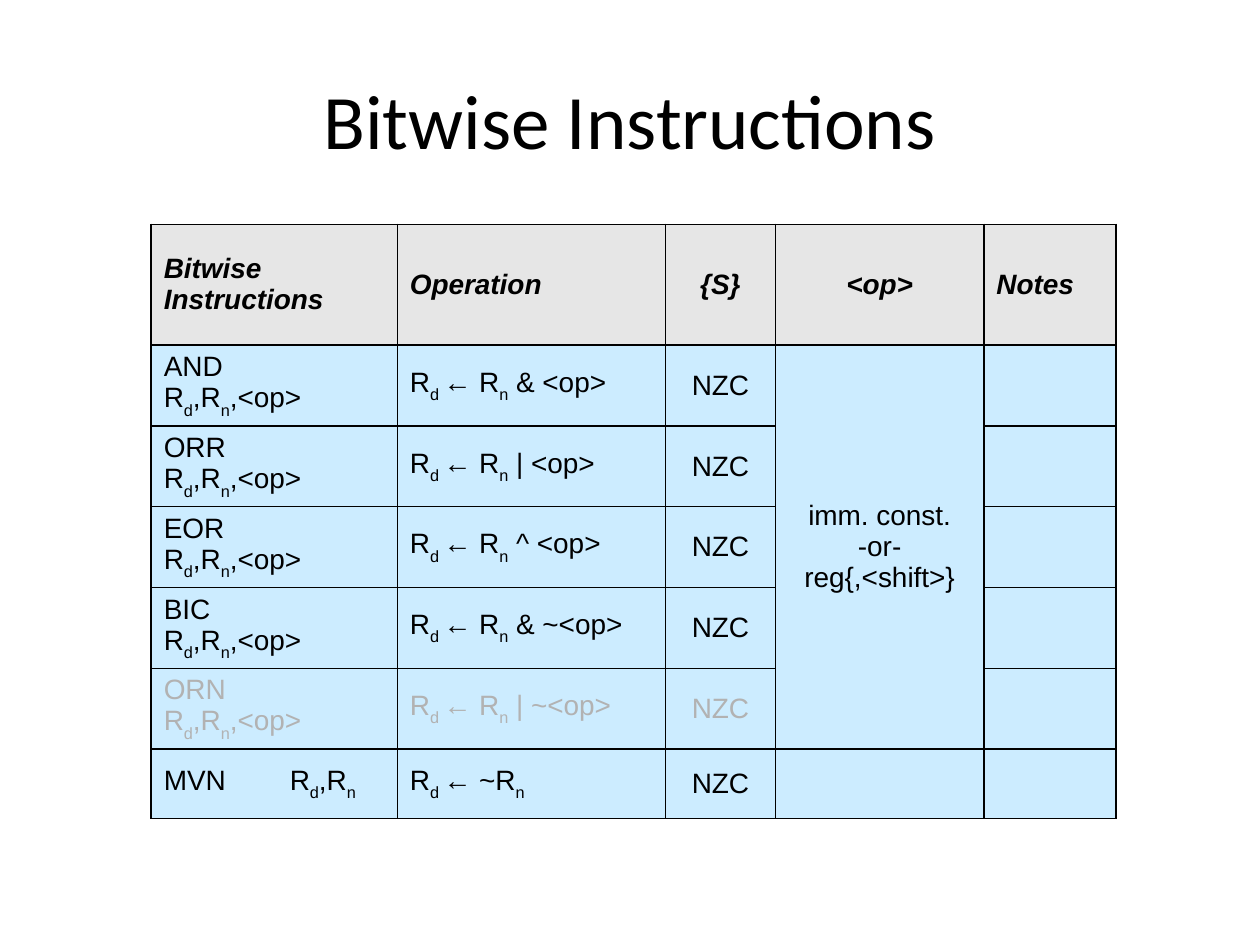
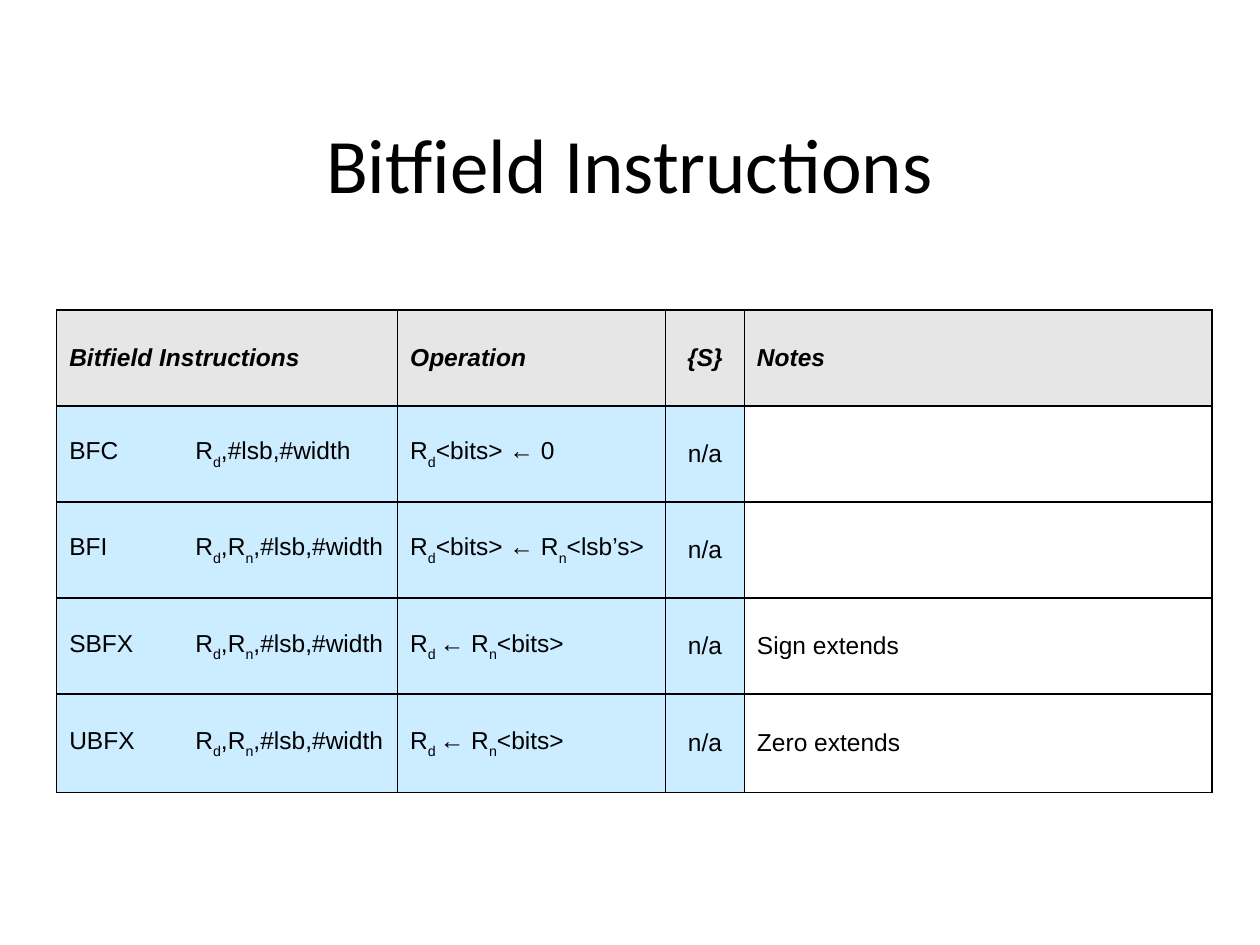
"""Build two slides of tables listing bitwise and bitfield instructions."""
from dataclasses import dataclass

from lxml import etree
from pptx import Presentation
from pptx import util as u
from pptx.dml.color import RGBColor
from pptx.enum import text as t
from pptx.oxml import ns

Pt = u.Pt
LEFT, CENTER = t.PP_ALIGN.LEFT, t.PP_ALIGN.CENTER


@dataclass(frozen=True)
class Theme:
    ink: str = "000000"
    dim: str = "B2B2B2"
    header: str = "E6E6E6"
    body: str = "CCECFF"
    paper: str = "FFFFFF"
    title_font: str = "Calibri"
    table_font: str = "Arial"
    title_size: int = 44
    bitwise_size: int = 16
    bitfield_size: int = 14
    border: int = 1
    operand_tab: int = 72


THEME = Theme()


@dataclass(frozen=True)
class Column:
    heading: str
    width: float
    align: t.PP_ALIGN = LEFT
    fill: str = THEME.body
    tab: int | None = None


@dataclass(frozen=True)
class Instruction:
    cells: tuple[str, ...]
    height: float
    color: str = THEME.ink


@dataclass(frozen=True)
class Listing:
    title: str
    title_top: float
    left: float
    top: float
    size: int
    header_height: float
    columns: tuple[Column, ...]
    instructions: tuple[Instruction, ...]
    merge: tuple[int, int, int] | None = None


def bitwise(name: str, operation: str, height: float = 39.6, operands: str = "R_d_,R_n_,<op>",
            choice: str = "", color: str = THEME.ink) -> Instruction:
    """Describe one row of the bitwise table."""
    return Instruction((f"{name} \t{operands}", operation, "NZC", choice, ""), height, color)


def bitfield(name: str, operation: str, note: str = "", height: float = 54.9,
             operands: str = "R_d_,R_n_,#lsb,#width") -> Instruction:
    """Describe one row of the bitfield table."""
    return Instruction((f"{name}\t{operands}", operation, "n/a", note), height)


BITWISE = Listing(
    "Bitwise Instructions", 23.04, 86.4, 128.16, THEME.bitwise_size, 69.12,
    (
        Column("Bitwise Instructions", 140.6, tab=THEME.operand_tab),
        Column("Operation", 153.2),
        Column("{S}", 63, CENTER),
        Column("<op>", 119, CENTER),
        Column("Notes", 75.6),
    ),
    (
        bitwise("AND", "R_d _← R_n_ & <op>", choice="imm. const.\n-or-\nreg{,<shift>}"),
        bitwise("ORR", "R_d _← R_n_ | <op>"),
        bitwise("EOR", "R_d _← R_n_ ^ <op>"),
        bitwise("BIC", "R_d _← R_n_ & ~<op>"),
        bitwise("ORN", "R_d _← R_n_ | ~<op>", color=THEME.dim),
        bitwise("MVN", "R_d _← ~R_n", operands="R_d_,R_n"),
    ),
    merge=(1, 5, 3),
)

BITFIELD = Listing(
    "Bitfield Instructions", 48.24, 32.4, 177.12, THEME.bitfield_size, 54.9,
    (
        Column("Bitfield Instructions", 194.8, tab=THEME.operand_tab),
        Column("Operation", 153.2),
        Column("{S}", 45, CENTER),
        Column("Notes", 267.1, fill=THEME.paper),
    ),
    (
        bitfield("BFC ", "R_d_<bits> ← 0", operands="R_d_,#lsb,#width"),
        bitfield("BFI ", "R_d_<bits> ← R_n_<lsb’s>"),
        bitfield("SBFX", "R_d _← R_n_<bits>", "Sign extends"),
        bitfield("UBFX", "R_d _← R_n_<bits>", "Zero extends", height=56.2),
    ),
)


def write(frame, content: str, *, size: int, font: str, color: str = THEME.ink,
          bold: bool = False, italic: bool = False, align: t.PP_ALIGN = LEFT,
          tab: int | None = None) -> None:
    """Write formatted lines, with subscripts enclosed in underscores."""
    for index, line in enumerate(content.split("\n")):
        paragraph = frame.add_paragraph() if index else frame.paragraphs[0]
        paragraph.alignment = align
        if tab:
            stops = etree.SubElement(paragraph._p.get_or_add_pPr(), ns.qn("a:tabLst"))
            etree.SubElement(stops, ns.qn("a:tab"), pos=str(Pt(tab)), algn="l")
        for part, piece in enumerate(line.split("_")):
            if not piece:
                continue
            run = paragraph.add_run()
            run.text = piece
            run.font.size, run.font.name = Pt(size), font
            run.font.bold, run.font.italic = bold, italic
            run.font.color.rgb = RGBColor.from_string(color)
            if part % 2:
                run._r.get_or_add_rPr().set("baseline", "-30000")


def style_cell(cell, fill: str) -> None:
    """Give a cell its borders, fill and middle anchor."""
    properties = cell._tc.get_or_add_tcPr()
    for side in ("lnL", "lnR", "lnT", "lnB"):
        line = etree.SubElement(properties, ns.qn(f"a:{side}"), w=str(Pt(THEME.border)))
        paint = etree.SubElement(line, ns.qn("a:solidFill"))
        etree.SubElement(paint, ns.qn("a:srgbClr"), val=THEME.ink)
    cell.fill.solid()
    cell.fill.fore_color.rgb = RGBColor.from_string(fill)
    cell.vertical_anchor = t.MSO_ANCHOR.MIDDLE


def add_instruction_table(slide, listing: Listing) -> None:
    """Draw the heading row and the instruction rows."""
    heights = [listing.header_height] + [row.height for row in listing.instructions]
    widths = [column.width for column in listing.columns]
    table = slide.shapes.add_table(
        len(heights), len(widths), Pt(listing.left), Pt(listing.top),
        Pt(sum(widths)), Pt(sum(heights))).table
    table.first_row = table.horz_banding = False
    for row, height in zip(table.rows, heights):
        row.height = Pt(height)
    for index, column in enumerate(listing.columns):
        table.columns[index].width = Pt(column.width)
        layout = dict(size=listing.size, font=THEME.table_font,
                      align=column.align, tab=column.tab)
        heading = table.cell(0, index)
        style_cell(heading, THEME.header)
        write(heading.text_frame, column.heading, bold=True, italic=True, **layout)
        for number, instruction in enumerate(listing.instructions, 1):
            cell = table.cell(number, index)
            style_cell(cell, column.fill)
            write(cell.text_frame, instruction.cells[index], color=instruction.color, **layout)
    if listing.merge:
        first, last, column_index = listing.merge
        table.cell(first, column_index).merge(table.cell(last, column_index))


def add_listing(deck, listing: Listing) -> None:
    """Add a slide with a centred title and its instruction table."""
    slide = deck.slides.add_slide(deck.slide_layouts[5])
    title = slide.shapes.title
    title.left, title.top = Pt(54), Pt(listing.title_top)
    title.width, title.height = Pt(612), Pt(90)
    title.text_frame.vertical_anchor = t.MSO_ANCHOR.MIDDLE
    write(title.text_frame, listing.title, size=THEME.title_size,
          font=THEME.title_font, align=CENTER)
    add_instruction_table(slide, listing)


def main() -> None:
    """Build and save the presentation."""
    deck = Presentation()
    deck.slide_width, deck.slide_height = Pt(720), Pt(540)
    for listing in (BITWISE, BITFIELD):
        add_listing(deck, listing)
    deck.save("out.pptx")


if __name__ == "__main__":
    main()
